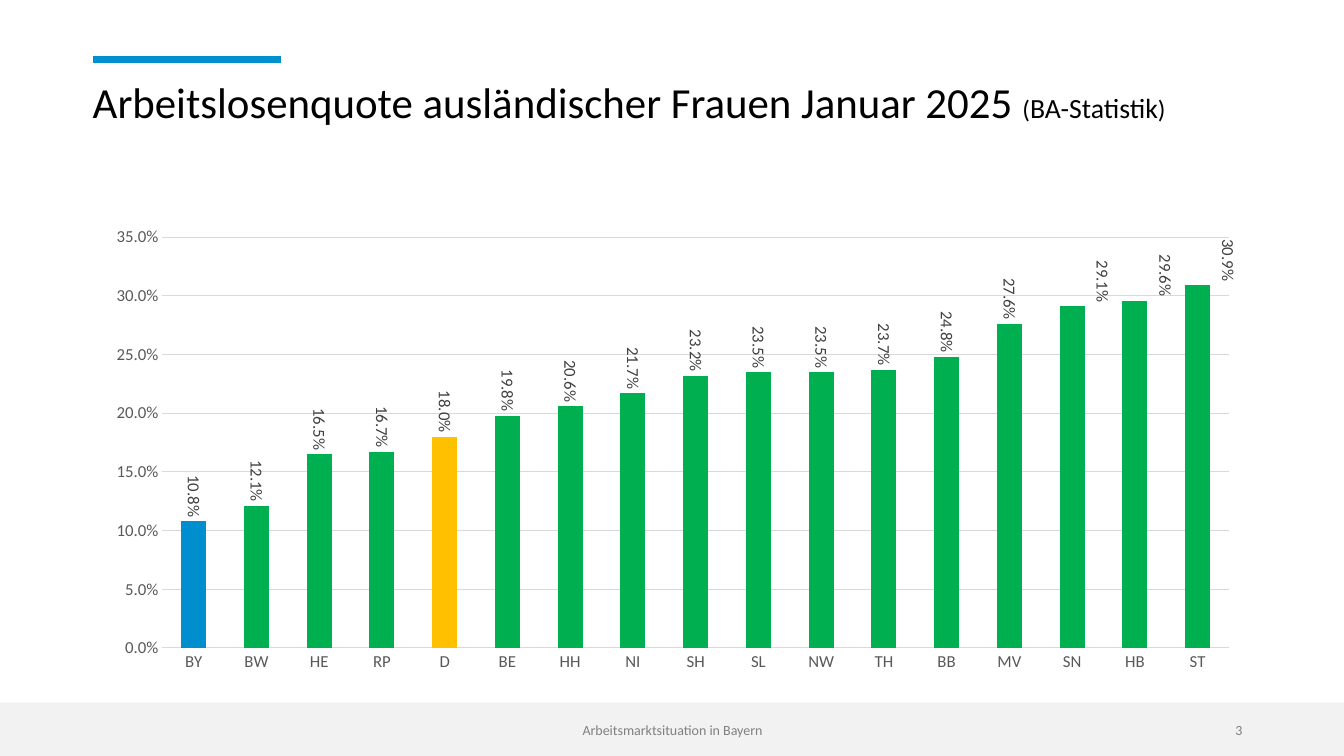
from copy import deepcopy

from pptx import Presentation
from pptx.chart.data import CategoryChartData
from pptx.dml.color import RGBColor
from pptx.enum.chart import XL_CHART_TYPE as ChartType
from pptx.enum.chart import XL_LABEL_POSITION as LabelPosition
from pptx.enum.chart import XL_TICK_MARK as TickMark
from pptx.enum.shapes import MSO_CONNECTOR as Connector
from pptx.enum.shapes import MSO_SHAPE as Shape
from pptx.enum.text import MSO_ANCHOR as Anchor
from pptx.enum.text import PP_ALIGN as Align
from pptx.oxml import parse_xml
from pptx.oxml.ns import nsdecls, qn
from pptx.util import Inches, Pt

FONT = "Calibri"
CHART_WIDTH = 11.5
LABEL_SHIFT = 0.3
SHIFTED_STATES = ["SN", "HB", "ST"]
RATES = {
    "BY": 0.108, "BW": 0.121, "HE": 0.165, "RP": 0.167, "D": 0.18, "BE": 0.198,
    "HH": 0.206, "NI": 0.217, "SH": 0.232, "SL": 0.235, "NW": 0.235, "TH": 0.237,
    "BB": 0.248, "MV": 0.276, "SN": 0.291, "HB": 0.296, "ST": 0.309,
}
HIGHLIGHTS = {"BY": "008ECF", "D": "FFC000"}


def color(value):
    """Turn a hex string into a colour."""
    return RGBColor.from_string(value)


def style_font(font, size, value):
    """Set typeface, size and colour of a font."""
    font.name = FONT
    font.size = Pt(size)
    font.color.rgb = color(value)


def fill_solid(target, value):
    """Give a shape or chart format a solid fill."""
    target.fill.solid()
    target.fill.fore_color.rgb = color(value)


def add_footer_band(page):
    """Draw the grey band along the bottom edge."""
    band = page.shapes.add_shape(
        Shape.RECTANGLE, 0, Inches(6.97), Inches(13.33), Inches(0.53))
    band.shadow.inherit = False
    fill_solid(band, "F2F2F2")
    band.line.fill.background()


def add_accent_line(page):
    """Draw the blue line above the title."""
    accent = page.shapes.add_connector(
        Connector.STRAIGHT, Inches(0.92), Inches(0.59), Inches(2.79), Inches(0.59))
    accent.line.color.rgb = color("008FCF")
    accent.line.width = Pt(5)
    properties = accent.element.find(qn("p:spPr"))
    properties.append(parse_xml(f"<a:effectLst {nsdecls('a')}/>"))


def add_title(page, parts):
    """Add the title from text and size pairs."""
    box = page.shapes.add_textbox(Inches(0.92), Inches(0.76), Inches(11.5), Inches(0.72))
    frame = box.text_frame
    frame.word_wrap = True
    frame.margin_left = 0
    para = frame.paragraphs[0]
    para.line_spacing = 0.9
    for text, size in parts:
        span = para.add_run()
        span.text = text
        style_font(span.font, size, "000000")


def add_footer_text(page, text, left, width, align):
    """Add a small grey text inside the footer band."""
    box = page.shapes.add_textbox(Inches(left), Inches(7.04), Inches(width), Inches(0.4))
    frame = box.text_frame
    frame.word_wrap = True
    frame.vertical_anchor = Anchor.MIDDLE
    frame.text = text
    para = frame.paragraphs[0]
    para.alignment = align
    style_font(para.runs[0].font, 10, "808080")


def manual_layout(settings):
    """Build a chart layout element from names and values."""
    items = "".join(f'<c:{name} val="{value}"/>' for name, value in settings.items())
    return parse_xml(
        f"<c:layout {nsdecls('c')}><c:manualLayout>{items}</c:manualLayout></c:layout>")


def style_axis(axis):
    """Give an axis grey text and no line or ticks."""
    axis.major_tick_mark = TickMark.NONE
    axis.minor_tick_mark = TickMark.NONE
    axis.format.line.fill.background()
    style_font(axis.tick_labels.font, 12, "595959")


def style_labels(series):
    """Turn the value labels upright and shift the last ones aside."""
    labels = series.data_labels
    labels.show_value = True
    labels.number_format = "0.0%"
    labels.number_format_is_linked = False
    labels.position = LabelPosition.OUTSIDE_END
    style_font(labels.font, 12, "404040")
    group = series._element.find(qn("c:dLbls"))
    for leader in group.findall(qn("c:showLeaderLines")):
        leader.set("val", "0")
    text_style = group.find(qn("c:txPr"))
    body = text_style.find(qn("a:bodyPr"))
    body.set("rot", "5400000")
    body.set("vert", "horz")
    number_format = group.find(qn("c:numFmt"))
    states = list(RATES)
    for state in SHIFTED_STATES:
        series.points[states.index(state)].data_label.position = LabelPosition.OUTSIDE_END
        label = group.findall(qn("c:dLbl"))[-1]
        for old in label.findall(qn("c:spPr")) + label.findall(qn("c:txPr")):
            label.remove(old)
        layout = manual_layout({"x": LABEL_SHIFT / CHART_WIDTH, "y": 0})
        parts = [layout, deepcopy(number_format), deepcopy(text_style)]
        for place, part in enumerate(parts, start=1):
            label.insert(place, part)


def add_rate_chart(page):
    """Add the column chart of rates by state."""
    data = CategoryChartData(number_format="0.0%")
    data.categories = list(RATES)
    data.add_series("Series 1", list(RATES.values()))
    chart = page.shapes.add_chart(
        ChartType.COLUMN_CLUSTERED,
        Inches(0.92), Inches(2.17), Inches(CHART_WIDTH), Inches(4.58), data).chart
    style_font(chart.font, 10, "000000")
    chart.has_legend = False
    chart.has_title = False

    style_axis(chart.category_axis)
    values = chart.value_axis
    style_axis(values)
    values.minimum_scale = 0
    values.maximum_scale = 0.35
    values.major_unit = 0.05
    values.tick_labels.number_format = "0.0%"
    values.tick_labels.number_format_is_linked = False
    values.major_gridlines.format.line.color.rgb = color("D9D9D9")
    values.major_gridlines.format.line.width = Pt(0.75)

    plot = chart.plots[0]
    plot.gap_width = 150
    plot.vary_by_categories = False
    series = plot.series[0]
    fill_solid(series.format, "00B050")
    for index, state in enumerate(RATES):
        if state in HIGHLIGHTS:
            fill_solid(series.points[index].format, HIGHLIGHTS[state])
    style_labels(series)

    area = chart.element.find(".//" + qn("c:plotArea"))
    for old in area.findall(qn("c:layout")):
        area.remove(old)
    area.insert(0, manual_layout({
        "layoutTarget": "inner", "xMode": "edge", "yMode": "edge",
        "x": 0.06, "y": 0.04, "w": 0.92, "h": 0.89}))


def main():
    """Build the slide and save it."""
    deck = Presentation()
    deck.slide_width = Inches(13.33)
    deck.slide_height = Inches(7.5)
    page = deck.slides.add_slide(deck.slide_layouts[6])
    add_footer_band(page)
    add_accent_line(page)
    add_title(page, [
        ("Arbeitslosenquote ausländischer Frauen Januar 2025 ", 30.6),
        ("(", 18), ("BA-Statistik", 19.8), (")", 18)])
    add_rate_chart(page)
    add_footer_text(page, "3", 9.42, 3, Align.RIGHT)
    add_footer_text(page, "Arbeitsmarktsituation in Bayern", 4.42, 4.5, Align.CENTER)
    deck.save("out.pptx")


if __name__ == "__main__":
    main()
